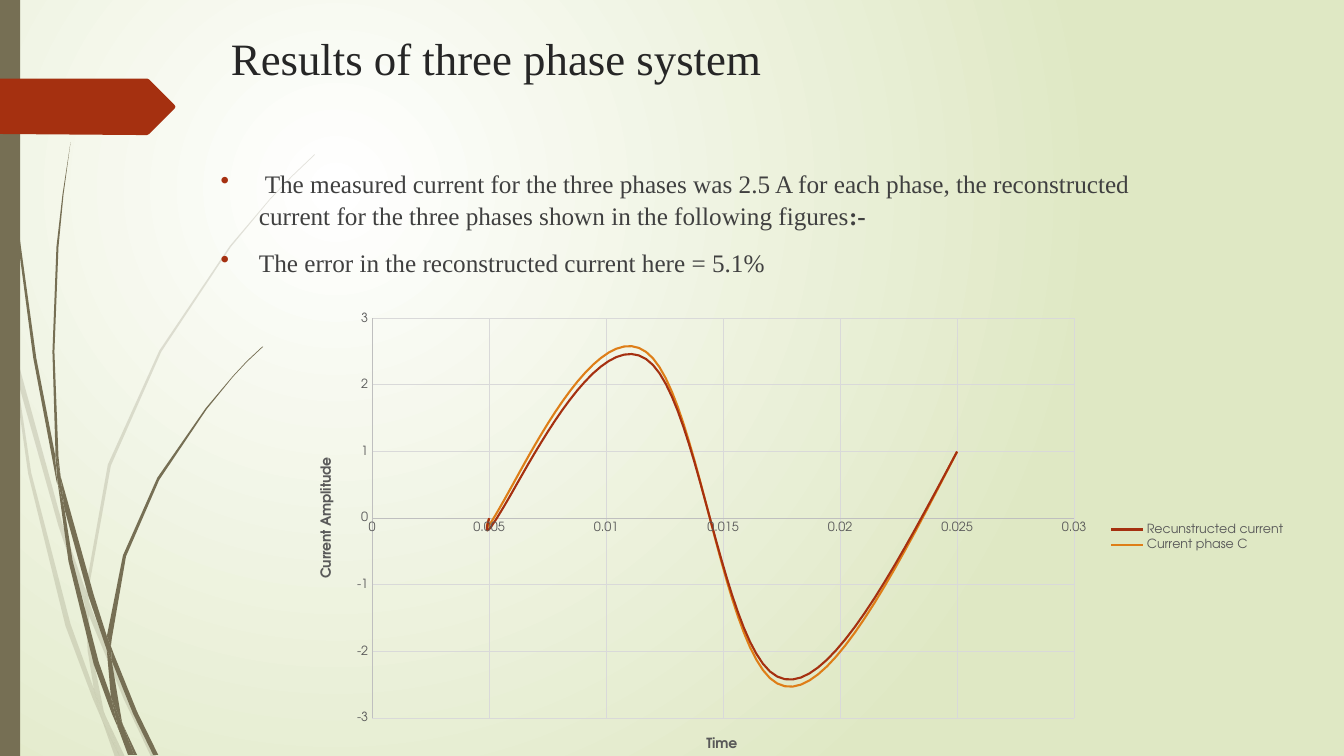
from dataclasses import dataclass

from lxml import etree
from pptx import Presentation
from pptx.chart.data import XyChartData
from pptx.dml.color import RGBColor
from pptx.enum.chart import XL_CHART_TYPE, XL_LEGEND_POSITION, XL_TICK_MARK
from pptx.enum.shapes import MSO_SHAPE
from pptx.oxml.ns import qn
from pptx.util import Inches, Pt

SMOOTH_SCATTER = XL_CHART_TYPE.XY_SCATTER_SMOOTH_NO_MARKERS
LEGEND_RIGHT = XL_LEGEND_POSITION.RIGHT
NO_TICKS = XL_TICK_MARK.NONE
RECTANGLE = MSO_SHAPE.RECTANGLE
HUNDREDTH_INCH = Inches(0.01)

PALE_GRASS = (
    ((11, 350), (9, 322), (0, 282), (0, 299), (10, 344)),
    ((58, 522), (84, 599), (85, 586), (62, 520), (14, 345), (17, 376)),
    ((92, 607), (88, 596), (88, 610), (123, 694), (150, 751), (155, 751), (127, 692)),
    ((119, 751), (124, 751), (105, 711)),
    ((93, 683), (70, 619), (31, 469), (17, 376), (11, 350), (28, 470), (65, 621),
     (92, 693), (101, 714), (99, 707)),
    ((84, 599), (87, 646), (93, 683), (96, 692), (105, 711), (103, 706), (91, 646),
     (88, 610), (88, 608)),
    ((88, 584), (110, 462), (160, 349), (229, 245), (268, 198), (290, 175), (312, 154),
     (312, 153), (289, 175), (268, 197), (228, 244), (158, 348), (107, 461), (85, 584),
     (85, 586), (88, 596)),
    ((101, 714), (114, 751), (119, 751)),
    ((88, 608), (88, 610), (88, 596), (85, 586), (84, 599)),
    ((96, 692), (93, 683), (99, 707), (101, 714), (119, 751), (105, 711)),
)
DARK_GRASS = (
    ((7, 110), (17, 233), (33, 355), (56, 477), (57, 481), (55, 457), (55, 453), (36, 355),
     (19, 232), (8, 109), (5, 48), (4, 0), (3, 0), (4, 48)),
    ((88, 592), (106, 645), (106, 633), (106, 631), (93, 590), (60, 472), (64, 505)),
    ((113, 649), (110, 641), (111, 656), (132, 708), (152, 749), (157, 749), (136, 706)),
    ((110, 691), (98, 657), (72, 556), (64, 505), (57, 477), (68, 557), (93, 659),
     (111, 708), (117, 722), (116, 717)),
    ((60, 472), (58, 453), (54, 349), (58, 245), (63, 193), (70, 141), (62, 193), (56, 245),
     (52, 349), (55, 449)),
    ((133, 749), (136, 749), (122, 719)),
    ((57, 477), (64, 505), (60, 472), (55, 449), (55, 453)),
    ((111, 633), (125, 552), (158, 476), (205, 406), (231, 374), (245, 359), (261, 344),
     (260, 344), (245, 358), (231, 373), (204, 405), (156, 474), (122, 551), (106, 631),
     (110, 641)),
    ((117, 722), (127, 749), (131, 749)),
    ((106, 645), (110, 691), (116, 706), (122, 719), (121, 716), (111, 656), (109, 651)),
    ((106, 645), (109, 651), (111, 656), (110, 641), (106, 631), (106, 633)),
    ((116, 706), (110, 691), (116, 717), (117, 722), (130, 749), (133, 749), (122, 719)),
)
ARROW_TAB = ((173, 108), (148, 133), (146, 134), (136, 134), (0, 133), (0, 78), (136, 78),
             (146, 78), (148, 79), (173, 104), (174, 106))
BULLETS = (
    (" The measured current for the three phases was 2.5 A for each phase, the reconstructed "
     "current for the three phases shown in the following figures", ":-"),
    ("The error in the reconstructed current here = 5.1%",),
)
TIMES = (0.005, 0.006, 0.012, 0.017, 0.025)
CURRENTS = {
    "Recunstructed current": (0, 0.4, 2.3, -2.3, 1),
    "Current phase C": (0, 0.5, 2.4, -2.4, 1),
}
PLOT_AREA = {"x": 0.074, "y": 0.032, "w": 0.704, "h": 0.855}


@dataclass(frozen=True)
class Theme:
    """Colours, fonts and type sizes of the deck."""
    olive: str = "766F54"
    rust: str = "A53010"
    orange: str = "DE7E18"
    centre: str = "FFFFFF"
    edge: str = "DFE8C4"
    title: str = "262626"
    body: str = "404040"
    label: str = "595959"
    axis: str = "BFBFBF"
    grid: str = "D9D9D9"
    text_font: str = "Times New Roman"
    chart_font: str = "TeX Gyre Adventor"
    title_size: float = 32
    body_size: float = 18
    axis_title_size: float = 10
    label_size: float = 9


class SlideBuilder:
    """Draws themed elements on one slide."""

    def __init__(self, slide, theme):
        self.slide = slide
        self.theme = theme

    def background(self):
        fill = self.slide.background.fill
        fill.gradient()
        for stop, colour in zip(fill.gradient_stops, (self.theme.centre, self.theme.edge)):
            stop.color.rgb = RGBColor.from_string(colour)
        gradient = self.slide.element.find(".//" + qn("a:gradFill"))
        gradient.remove(gradient.find(qn("a:lin")))
        circle = etree.SubElement(gradient, qn("a:path"), path="circle")
        etree.SubElement(circle, qn("a:fillToRect"), l="50000", t="50000", r="100000", b="100000")

    def paint(self, shape, colour, opacity=100):
        shape.shadow.inherit = False
        shape.fill.solid()
        shape.fill.fore_color.rgb = RGBColor.from_string(colour)
        shape.line.fill.background()
        if opacity < 100:
            colour_element = shape.element.spPr.find(".//" + qn("a:srgbClr"))
            etree.SubElement(colour_element, qn("a:alpha"), val=str(opacity * 1000))

    def outline(self, shapes, points, colour, opacity=100):
        builder = shapes.build_freeform(*points[0], scale=HUNDREDTH_INCH)
        builder.add_line_segments(points[1:], close=True)
        self.paint(builder.convert_to_shape(), colour, opacity)

    def grass(self, blades, opacity=100):
        group = self.slide.shapes.add_group_shape()
        for blade in blades:
            self.outline(group.shapes, blade, self.theme.olive, opacity)

    def bar(self, left, top, width, height):
        shape = self.slide.shapes.add_shape(
            RECTANGLE, Inches(left), Inches(top), Inches(width), Inches(height))
        self.paint(shape, self.theme.olive)

    def text_frame(self, left, top, width, height):
        frame = self.slide.shapes.add_textbox(
            Inches(left), Inches(top), Inches(width), Inches(height)).text_frame
        frame.word_wrap = True
        return frame

    def style(self, font, size, colour, name):
        font.size = Pt(size)
        font.name = name
        font.color.rgb = RGBColor.from_string(colour)

    def title(self, text, *box):
        frame = self.text_frame(*box)
        frame.margin_left = Inches(0.2)
        frame.margin_top = Inches(0.1)
        frame.text = text
        self.style(frame.paragraphs[0].runs[0].font, self.theme.title_size,
                   self.theme.title, self.theme.text_font)

    def bullets(self, items, *box):
        frame = self.text_frame(*box)
        for index, parts in enumerate(items):
            paragraph = frame.add_paragraph() if index else frame.paragraphs[0]
            paragraph.space_before = Pt(10)
            paragraph.line_spacing = 1.07
            for position, part in enumerate(parts):
                run = paragraph.add_run()
                run.text = part
                run.font.bold = position > 0
                self.style(run.font, self.theme.body_size, self.theme.body, self.theme.text_font)
            properties = paragraph._p.get_or_add_pPr()
            properties.set("marL", str(Inches(0.38)))
            properties.set("indent", str(-Inches(0.38)))
            bullet_colour = etree.SubElement(properties, qn("a:buClr"))
            etree.SubElement(bullet_colour, qn("a:srgbClr"), val=self.theme.rust)
            etree.SubElement(properties, qn("a:buChar"), char="•")

    def line(self, line, colour, width):
        line.color.rgb = RGBColor.from_string(colour)
        line.width = Pt(width)

    def axis(self, axis, title, minimum, maximum, step, rotation):
        theme = self.theme
        axis.minimum_scale, axis.maximum_scale, axis.major_unit = minimum, maximum, step
        axis.major_tick_mark = axis.minor_tick_mark = NO_TICKS
        axis.has_major_gridlines = True
        self.line(axis.major_gridlines.format.line, theme.grid, 0.75)
        self.line(axis.format.line, theme.axis, 0.75)
        self.style(axis.tick_labels.font, theme.label_size, theme.label, theme.chart_font)
        frame = axis.axis_title.text_frame
        frame.text = title
        self.style(frame.paragraphs[0].runs[0].font, theme.axis_title_size,
                   theme.label, theme.chart_font)
        axis.axis_title.element.find(".//" + qn("a:bodyPr")).set("rot", str(rotation * 60000))

    def current_chart(self, left, top, width, height):
        theme = self.theme
        data = XyChartData()
        for name, currents in CURRENTS.items():
            series = data.add_series(name)
            for time, current in zip(TIMES, currents):
                series.add_data_point(time, current)
        chart = self.slide.shapes.add_chart(
            SMOOTH_SCATTER, Inches(left), Inches(top), Inches(width), Inches(height), data).chart
        chart.has_title = False
        self.style(chart.font, theme.axis_title_size, theme.label, theme.chart_font)
        chart.has_legend = True
        chart.legend.position = LEGEND_RIGHT
        chart.legend.include_in_layout = False
        self.style(chart.legend.font, theme.label_size, theme.label, theme.chart_font)
        self.axis(chart.category_axis, "Time", 0, 0.03, 0.005, 0)
        self.axis(chart.value_axis, "Current Amplitude", -3, 3, 1, -90)
        chart.plots[0].vary_by_categories = False
        for series, colour in zip(chart.plots[0].series, (theme.rust, theme.orange)):
            self.line(series.format.line, colour, 1.5)
        for smooth in chart.element.iter(qn("c:smooth")):
            smooth.set("val", "1")
        plot_area = chart.element.find(".//" + qn("c:plotArea"))
        for layout in plot_area.findall(qn("c:layout")):
            plot_area.remove(layout)
        layout = etree.Element(qn("c:layout"))
        plot_area.insert(0, layout)
        manual = etree.SubElement(layout, qn("c:manualLayout"))
        settings = {"layoutTarget": "inner", "xMode": "edge", "yMode": "edge", **PLOT_AREA}
        for key, value in settings.items():
            etree.SubElement(manual, qn("c:" + key), val=str(value))


def main():
    presentation = Presentation()
    presentation.slide_width, presentation.slide_height = Inches(13.33), Inches(7.5)
    slide = presentation.slides.add_slide(presentation.slide_layouts[6])
    builder = SlideBuilder(slide, Theme())
    builder.background()
    builder.grass(PALE_GRASS, opacity=20)
    builder.grass(DARK_GRASS)
    builder.bar(0, 0, 0.2, 7.5)
    builder.outline(slide.shapes, ARROW_TAB, builder.theme.rust)
    builder.title("Results of three phase system", 2.09, 0.2, 9.75, 1.4)
    builder.bullets(BULLETS, 2.09, 1.6, 9.75, 4.86)
    builder.current_chart(2.96, 3.01, 9.89, 4.64)
    presentation.save("out.pptx")


if __name__ == "__main__":
    main()
